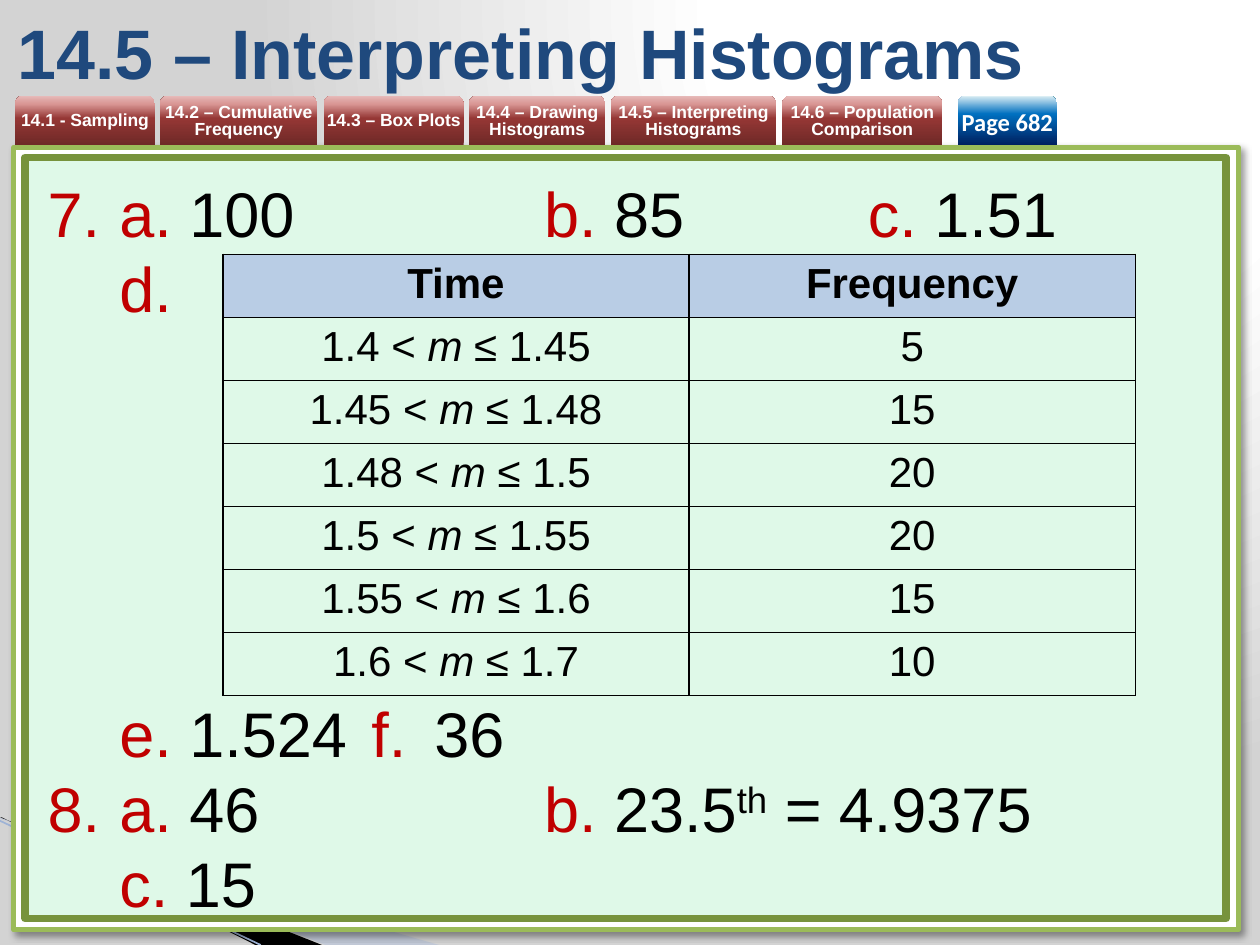
from dataclasses import dataclass

from lxml.etree import SubElement
from pptx import Presentation
from pptx.dml.color import RGBColor
from pptx.enum.shapes import MSO_CONNECTOR, MSO_SHAPE
from pptx.enum.text import MSO_ANCHOR, MSO_AUTO_SIZE, PP_ALIGN
from pptx.oxml import parse_xml
from pptx.oxml.ns import nsdecls, qn
from pptx.util import Pt


@dataclass(frozen=True)
class Theme:
    font: str = "Arial"
    page_font: str = "Calibri"
    title: str = "1F497D"
    label: str = "C00000"
    ink: str = "000000"
    white: str = "FFFFFF"
    panel_line: str = "9BBB59"
    card: str = "DFF9E8"
    card_line: str = "77933C"
    header: str = "B9CDE5"
    wedge: str = "A7B9DB"
    wedge_line: str = "9EB3D6"
    backdrop: tuple = ((0, "FFFFFF"), (40, "FFFFFF"), (100, "D3D3D3"))
    tab: tuple = ((0, "6F2927"), (54, "953735"), (83, "D99694"), (100, "E6B9B8"))
    page: tuple = ((0, "002060"), (63, "0070C0"), (100, "DBEEF4"))
    title_size: int = 40
    answer_size: int = 36
    table_size: int = 24
    page_size: int = 14
    tab_size: int = 10


THEME = Theme()
TABS = [  # left, width, label
    (8.6, 80, "14.1 - Sampling"),
    (91.4, 90, "14.2 – Cumulative Frequency"),
    (185, 80, "14.3 – Box Plots"),
    (268, 78, "14.4 – Drawing Histograms"),
    (349, 94.5, "14.5 – Interpreting Histograms"),
    (447, 91.5, "14.6 – Population Comparison"),
]
FREQUENCIES = [
    ("Time", "Frequency"),
    ("1.4 < m ≤ 1.45", "5"),
    ("1.45 < m ≤ 1.48", "15"),
    ("1.48 < m ≤ 1.5", "20"),
    ("1.5 < m ≤ 1.55", "20"),
    ("1.55 < m ≤ 1.6", "15"),
    ("1.6 < m ≤ 1.7", "10"),
]
ANSWERS = [  # question number, space before, (part, answer, superscript, rest)
    (7, 0, [("a.", " 100\t"), ("b.", " 85\t"), ("c.", " 1.51")]),
    (None, 0, [("d.", "")]),
    (None, 211, [("e.", " 1.524\t"), ("f.", "\t36")]),
    (8, 0, [("a.", " 46\t"), ("b.", " 23.5", "th", " = 4.9375")]),
    (None, 0, [("c.", " 15")]),
]
ANSWER_STOPS = (94.3, 283.7, 323, 468.7, 535.7)
ANSWER_PITCH = 43


def rgb(color):
    return RGBColor.from_string(color)


def add_run(paragraph, text, *, size, color=THEME.ink, font=THEME.font,
            bold=False, italic=False, baseline=0):
    run = paragraph.add_run()
    run.text = text
    run.font.name, run.font.size = font, Pt(size)
    run.font.bold, run.font.italic = bold, italic
    run.font.color.rgb = rgb(color)
    if baseline:
        run.font._element.set("baseline", str(baseline * 1000))


def gradient(stops, direction):
    marks = "".join(f'<a:gs pos="{place * 1000}"><a:srgbClr val="{color}"/></a:gs>'
                    for place, color in stops)
    return (f'<a:gradFill {nsdecls("a")} rotWithShape="1">'
            f"<a:gsLst>{marks}</a:gsLst>{direction}</a:gradFill>")


def set_background(slide):
    fill = gradient(THEME.backdrop, '<a:path path="circle"><a:fillToRect '
                    'l="65000" t="0" r="0" b="98000"/></a:path>')
    slide._element.cSld.insert(0, parse_xml(
        f'<p:bg {nsdecls("p", "a")}><p:bgPr>{fill}<a:effectLst/></p:bgPr></p:bg>'))


def add_wedge(slide, points, color, opacity=100):
    builder = slide.shapes.build_freeform(*points[0], scale=Pt(1))
    builder.add_line_segments(points[1:], close=True)
    wedge = builder.convert_to_shape()
    wedge.shadow.inherit = False
    wedge.fill.solid()
    wedge.fill.fore_color.rgb = rgb(color)
    wedge.line.fill.background()
    if opacity < 100:
        tint = wedge._element.spPr.find(".//" + qn("a:srgbClr"))
        SubElement(tint, qn("a:alpha"), val=str(opacity * 1000))


def add_edge_line(slide, start, end, color, width):
    edge = slide.shapes.add_connector(
        MSO_CONNECTOR.STRAIGHT, *map(Pt, start), *map(Pt, end))
    edge.line.color.rgb, edge.line.width = rgb(color), Pt(width)
    SubElement(edge._element.spPr, qn("a:effectLst"))


def add_panel(slide, box, fill, line, width, shadow=False):
    panel = slide.shapes.add_shape(MSO_SHAPE.RECTANGLE, *map(Pt, box))
    panel.shadow.inherit = False
    panel.fill.solid()
    panel.fill.fore_color.rgb = rgb(fill)
    panel.line.color.rgb, panel.line.width = rgb(line), Pt(width)
    if shadow:
        effects = panel._element.spPr.find(qn("a:effectLst"))
        cast = SubElement(effects, qn("a:outerShdw"), blurRad=str(Pt(4)),
                          dist=str(Pt(3)), dir="2700000", algn="tl", rotWithShape="0")
        tint = SubElement(cast, qn("a:srgbClr"), val=THEME.ink)
        SubElement(tint, qn("a:alpha"), val="40000")


def add_tab(slide, left, width, label, stops, spacing=None, **style):
    tab = slide.shapes.add_shape(MSO_SHAPE.ROUND_2_SAME_RECTANGLE,
                                 Pt(left), Pt(54.7), Pt(width), Pt(28.1))
    tab.shadow.inherit = False
    tab.line.fill.background()
    outline = tab._element.spPr.find(qn("a:ln"))
    outline.addprevious(parse_xml(gradient(stops, '<a:lin ang="16200000" scaled="0"/>')))
    frame = tab.text_frame
    frame.word_wrap, frame.vertical_anchor = True, MSO_ANCHOR.MIDDLE
    frame.margin_left = frame.margin_right = frame.margin_top = frame.margin_bottom = 0
    paragraph = frame.paragraphs[0]
    paragraph.alignment = PP_ALIGN.CENTER
    if spacing:
        paragraph.line_spacing = Pt(spacing)
    add_run(paragraph, label, color=THEME.white, bold=True, **style)


def set_title(slide, text):
    title = slide.shapes.title
    title.left, title.top, title.width, title.height = map(Pt, (2.9, 3.6, 607, 51.1))
    frame = title.text_frame
    frame.auto_size, frame.vertical_anchor = MSO_AUTO_SIZE.NONE, MSO_ANCHOR.MIDDLE
    frame.paragraphs[0].alignment = PP_ALIGN.LEFT
    add_run(frame.paragraphs[0], text, size=THEME.title_size, color=THEME.title, bold=True)


def format_answer(paragraph, number, space):
    paragraph.line_spacing = Pt(ANSWER_PITCH)
    if space:
        paragraph.space_before = Pt(space)
    props = paragraph._p.get_or_add_pPr()
    props.set("marL", str(Pt(41)))
    props.set("indent", str(Pt(-41 if number else 0)))
    if number:
        SubElement(SubElement(props, qn("a:buClr")), qn("a:srgbClr"), val=THEME.label)
        SubElement(props, qn("a:buAutoNum"), type="arabicPeriod", startAt=str(number))
    stops = SubElement(props, qn("a:tabLst"))
    for stop in ANSWER_STOPS:
        SubElement(stops, qn("a:tab"), pos=str(Pt(stop)), algn="l")


def add_answers(slide):
    frame = slide.shapes.add_textbox(Pt(20.2), Pt(95), Pt(674.6), Pt(443.5)).text_frame
    frame.word_wrap, frame.margin_top = True, Pt(5)
    size = THEME.answer_size
    for index, (number, space, parts) in enumerate(ANSWERS):
        paragraph = frame.add_paragraph() if index else frame.paragraphs[0]
        format_answer(paragraph, number, space)
        for part, answer, *power in parts:
            add_run(paragraph, part, size=size, color=THEME.label)
            for text, baseline in zip((answer, *power), (0, 30, 0)):
                if text:
                    add_run(paragraph, text, size=size, baseline=baseline)


def format_cell(cell, text, heading):
    cell.margin_left = cell.margin_right = cell.margin_top = cell.margin_bottom = Pt(3.6)
    paragraph = cell.text_frame.paragraphs[0]
    paragraph.alignment = PP_ALIGN.CENTER
    before, variable, after = (text, "", "") if heading else text.partition("m")
    for piece in filter(None, (before, variable, after)):
        add_run(paragraph, piece, size=THEME.table_size, bold=heading, italic=piece == "m")
    props = cell._tc.get_or_add_tcPr()
    for side in ("a:lnL", "a:lnR", "a:lnT", "a:lnB"):
        border = SubElement(props, qn(side), w=str(Pt(1)))
        SubElement(SubElement(border, qn("a:solidFill")), qn("a:srgbClr"), val=THEME.ink)
    if heading:
        cell.fill.solid()
        cell.fill.fore_color.rgb = rgb(THEME.header)
    else:
        cell.fill.background()


def add_frequency_table(slide):
    table = slide.shapes.add_table(len(FREQUENCIES), 2, Pt(127.4), Pt(145.3),
                                   Pt(521.4), Pt(252)).table
    table.first_row = table.horz_banding = False
    for column, width in zip(table.columns, (266.4, 255)):
        column.width = Pt(width)
    for r, values in enumerate(FREQUENCIES):
        table.rows[r].height = Pt(36)
        for c, text in enumerate(values):
            format_cell(table.cell(r, c), text, heading=r == 0)


def main():
    deck = Presentation()
    deck.slide_width, deck.slide_height = Pt(720), Pt(540)
    slide = deck.slides.add_slide(deck.slide_layouts[5])
    set_background(slide)
    set_title(slide, "14.5 – Interpreting Histograms")
    # Corner decoration
    add_wedge(slide, [(0, 468), (251, 540), (186.5, 540), (0, 467)], THEME.wedge, 40)
    add_wedge(slide, [(0, 466.6), (184, 540), (145.5, 540), (0.7, 467)], THEME.ink)
    add_edge_line(slide, (0, 469), (149, 540), THEME.wedge_line, 0.95)
    # Framed card
    add_panel(slide, (7.9, 84.2, 699.8, 447.1), THEME.white, THEME.panel_line, 3, True)
    add_panel(slide, (14.4, 90, 686.2, 434.9), THEME.card, THEME.card_line, 4.33)
    # Chapter tabs and page marker
    for left, width, label in TABS:
        add_tab(slide, left, width, label, THEME.tab, spacing=10, size=THEME.tab_size)
    add_tab(slide, 547.2, 56.9, "Page 682", THEME.page,
            size=THEME.page_size, font=THEME.page_font)
    # Answers
    add_answers(slide)
    add_frequency_table(slide)
    deck.save("out.pptx")


if __name__ == "__main__":
    main()
